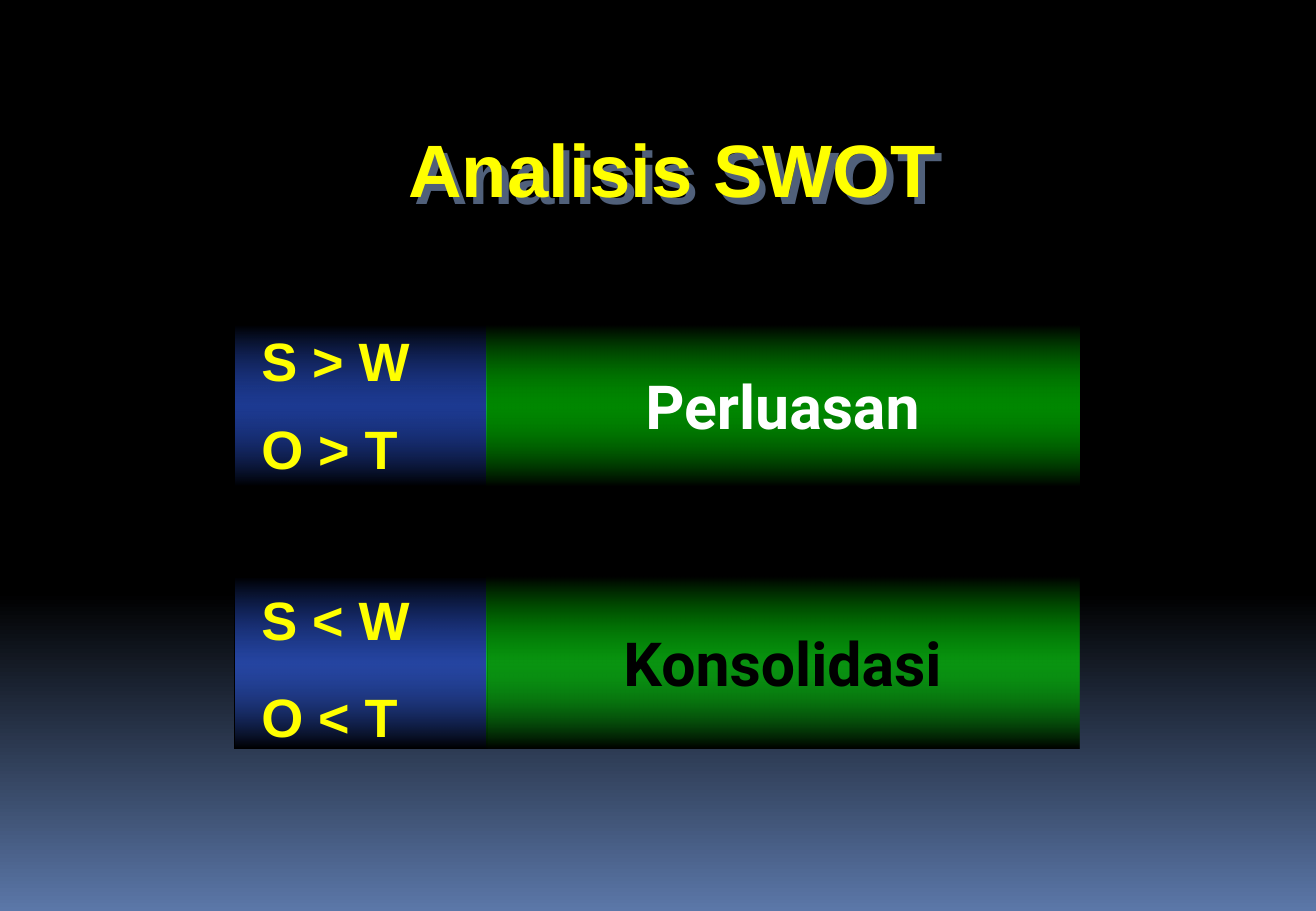
from lxml.etree import SubElement
from pptx import Presentation
from pptx.dml.color import RGBColor
from pptx.enum.shapes import MSO_SHAPE
from pptx.enum.text import MSO_ANCHOR, PP_ALIGN
from pptx.oxml.ns import qn
from pptx.util import Inches, Pt


def paint_gradient(fill, element, stops):
    """Fill from top to bottom; each stop is (position %, hex colour, opacity %)."""
    fill.gradient()
    fill.gradient_angle = 270
    stop_list = element.find(".//" + qn("a:gsLst"))
    for old_stop in list(stop_list):
        stop_list.remove(old_stop)
    for position, colour, opacity in stops:
        stop = SubElement(stop_list, qn("a:gs"), pos=str(position * 1000))
        tint = SubElement(stop, qn("a:srgbClr"), val=colour)
        SubElement(tint, qn("a:alpha"), val=str(opacity * 1000))


def write(para, text, size, font, colour):
    para.text = text
    para.font.size = Pt(size)
    para.font.name = font
    para.font.bold = True
    para.font.color.rgb = RGBColor.from_string(colour)


deck = Presentation()
deck.slide_width, deck.slide_height = Inches(10.83), Inches(7.5)
page = deck.slides.add_slide(deck.slide_layouts[6])
paint_gradient(page.background.fill, page.element,
               [(0, "000000", 100), (65, "000000", 100), (100, "5B77A8", 100)])

# Each row: top, height, conditions, top margin, gap in points, strategy, its colour
rows = [
    (2.67, 1.34, ("S > W", "O > T"), 0.03, 13.5, "Perluasan", "FFFFFF"),
    (4.75, 1.41, ("S < W", "O < T"), 0.08, 19, "Konsolidasi", "000000"),
]
# Each column: left, width, middle colour, its opacity
columns = [(1.93, 2.08, "3366FF", 57), (4, 4.88, "00FF00", 53)]

for top, height, conditions, margin, gap, strategy, strategy_colour in rows:
    boxes = []
    for left, width, colour, opacity in columns:
        box = page.shapes.add_shape(MSO_SHAPE.RECTANGLE, Inches(left), Inches(top),
                                    Inches(width), Inches(height))
        box.shadow.inherit = False
        box.line.fill.background()
        paint_gradient(box.fill, box.element,
                       [(0, "000000", 100), (50, colour, opacity), (100, "000000", 100)])
        boxes.append(box)
    condition_box, strategy_box = boxes

    condition_box.line.color.rgb = RGBColor.from_string("000000")
    condition_box.line.width = Pt(0.75)
    frame = condition_box.text_frame
    frame.vertical_anchor = MSO_ANCHOR.TOP
    frame.margin_left, frame.margin_top = Inches(0.22), Inches(margin)
    for index, condition in enumerate(conditions):
        para = frame.add_paragraph() if index else frame.paragraphs[0]
        write(para, condition, 32, "Arial", "FFFF00")
        para.alignment = PP_ALIGN.LEFT
        para.space_before = Pt(gap * index)

    strategy_box.text_frame.vertical_anchor = MSO_ANCHOR.MIDDLE
    para = strategy_box.text_frame.paragraphs[0]
    write(para, strategy, 36, "Roboto", strategy_colour)
    para.alignment = PP_ALIGN.CENTER

title = page.shapes.add_shape(MSO_SHAPE.ROUNDED_RECTANGLE, Inches(0.84), Inches(0.94),
                              Inches(9.39), Inches(0.92))
title.adjustments[0] = 0.22
title.fill.background()
title.line.fill.background()
title.shadow.inherit = False
effects = title.element.spPr.find(qn("a:effectLst"))
shadow = SubElement(effects, qn("a:outerShdw"), dist=str(Inches(0.075)),
                    dir="2700000", algn="ctr", rotWithShape="0")
SubElement(shadow, qn("a:srgbClr"), val="50607A")
title.text_frame.vertical_anchor = MSO_ANCHOR.BOTTOM
para = title.text_frame.paragraphs[0]
write(para, "Analisis SWOT", 44, "Arial", "FFFF00")
para.alignment = PP_ALIGN.CENTER

deck.save("out.pptx")
